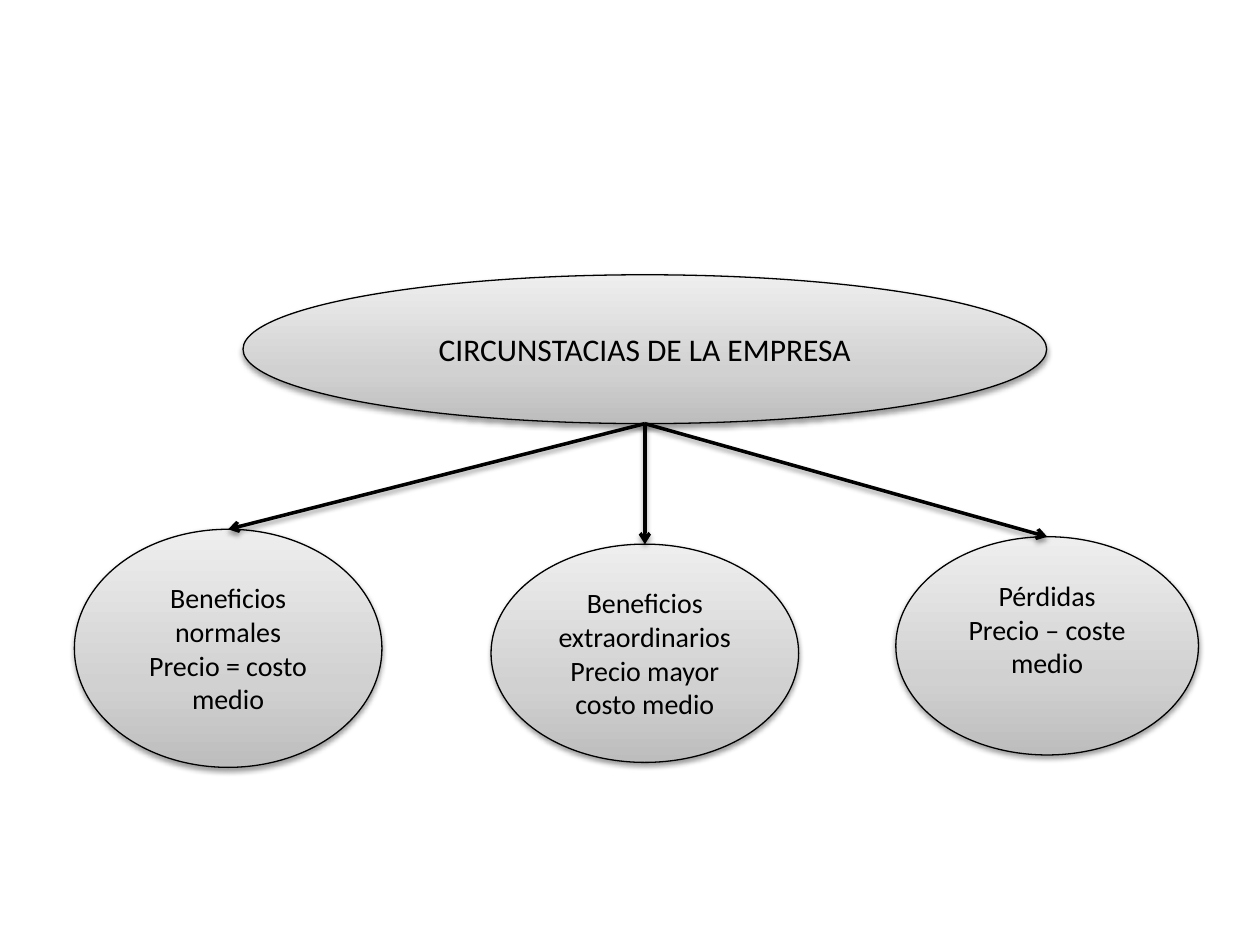
from copy import deepcopy
from dataclasses import dataclass

from lxml import etree
from pptx import Presentation
from pptx.dml.color import RGBColor
from pptx.enum.shapes import MSO_CONNECTOR, MSO_SHAPE
from pptx.enum.text import MSO_ANCHOR, PP_ALIGN
from pptx.oxml.ns import qn
from pptx.util import Cm, Pt

ELLIPSE = MSO_SHAPE.OVAL
STRAIGHT = MSO_CONNECTOR.STRAIGHT
CENTER = PP_ALIGN.CENTER
MIDDLE = MSO_ANCHOR.MIDDLE
BLANK_LAYOUT = 6


@dataclass(frozen=True)
class Theme:
    font: str = "Calibri"
    ink: RGBColor = RGBColor(0, 0, 0)
    gradient: tuple = ((0, "BDBDBD"), (0.35, "D1D1D1"), (1, "EEEEEE"))
    heading_size: Pt = Pt(18)
    label_size: Pt = Pt(16)
    outline: Pt = Pt(0.75)
    arrow: Pt = Pt(2)


THEME = Theme()

# left, top, width, height in cm; bottom inset in cm; paragraphs
CASES = (
    (9.9, 10.97, 6.2, 4.4, 0.13,
     ("Beneficios extraordinarios", "Precio mayor costo medio")),
    (1.5, 10.67, 6.2, 4.8, 0.13,
     ("Beneficios normales", "Precio = costo medio")),
    (18.06, 10.82, 6.1, 4.4, 0.81,
     ("Pérdidas", "Precio – coste medio")),
)


def add_shadow(effects):
    """Put a soft shadow, falling straight down, in an effect list."""
    shadow = etree.SubElement(
        effects, qn("a:outerShdw"), blurRad=str(Pt(3.1)), dist=str(Pt(1.6)),
        dir="5400000", rotWithShape="0")
    color = etree.SubElement(shadow, qn("a:srgbClr"), val=str(THEME.ink))
    etree.SubElement(color, qn("a:alpha"), val="38000")


def fill_gradient(fill):
    fill.gradient()
    fill.gradient_angle = 90
    first = fill.gradient_stops[0]._gs
    first.addnext(deepcopy(first))
    for stop, (position, color) in zip(fill.gradient_stops, THEME.gradient):
        stop.position = position
        stop.color.rgb = RGBColor.from_string(color)


def write_text(frame, lines, size):
    frame.word_wrap = True
    frame.vertical_anchor = MIDDLE
    frame.text = "\n".join(lines)
    for para in frame.paragraphs:
        para.alignment = CENTER
        for span in para.runs:
            span.font.name = THEME.font
            span.font.size = size
            span.font.color.rgb = THEME.ink


def add_ellipse(page, left, top, width, height, lines, size):
    ellipse = page.shapes.add_shape(
        ELLIPSE, Cm(left), Cm(top), Cm(width), Cm(height))
    fill_gradient(ellipse.fill)
    ellipse.line.color.rgb = THEME.ink
    ellipse.line.width = THEME.outline
    ellipse.shadow.inherit = False
    add_shadow(ellipse._element.spPr.find(qn("a:effectLst")))
    write_text(ellipse.text_frame, lines, size)
    return ellipse


def add_arrow(page, source, target):
    """Join the bottom of one shape to the top of another."""
    arrow = page.shapes.add_connector(
        STRAIGHT,
        source.left + source.width // 2, source.top + source.height,
        target.left + target.width // 2, target.top)
    arrow.line.color.rgb = THEME.ink
    arrow.line.width = THEME.arrow
    etree.SubElement(arrow.line._get_or_add_ln(), qn("a:tailEnd"), type="arrow")
    add_shadow(etree.SubElement(arrow._element.spPr, qn("a:effectLst")))


def main():
    deck = Presentation()
    deck.slide_width, deck.slide_height = Cm(25.4), Cm(19.05)
    page = deck.slides.add_slide(deck.slide_layouts[BLANK_LAYOUT])

    cases = []
    for left, top, width, height, inset, lines in CASES:
        case = add_ellipse(page, left, top, width, height, lines,
                           THEME.label_size)
        case.text_frame.margin_bottom = Cm(inset)
        cases.append(case)

    company = add_ellipse(page, 4.9, 5.54, 16.2, 3,
                          ("CIRCUNSTACIAS DE LA EMPRESA",), THEME.heading_size)
    for case in cases:
        add_arrow(page, company, case)

    deck.save("out.pptx")


if __name__ == "__main__":
    main()
